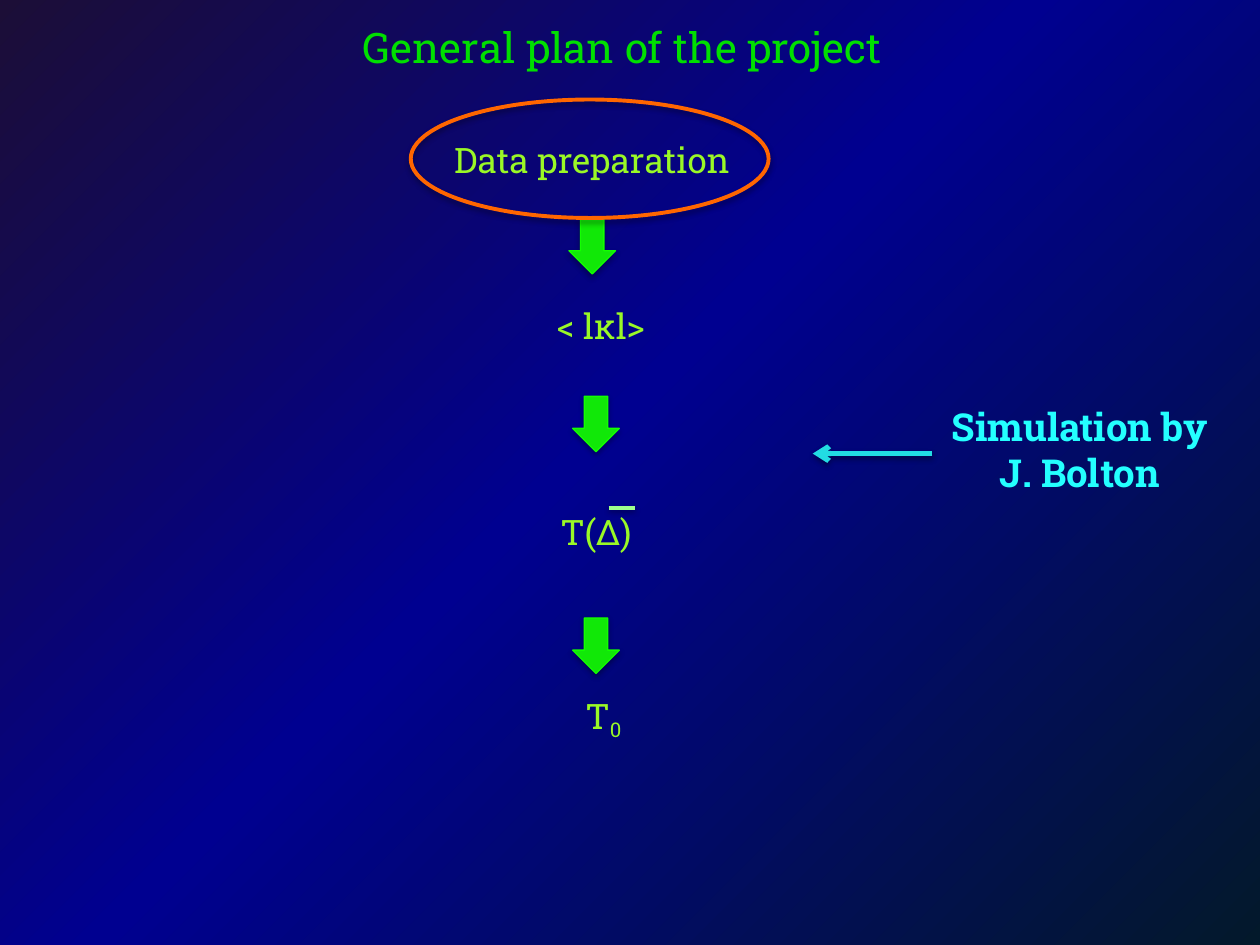
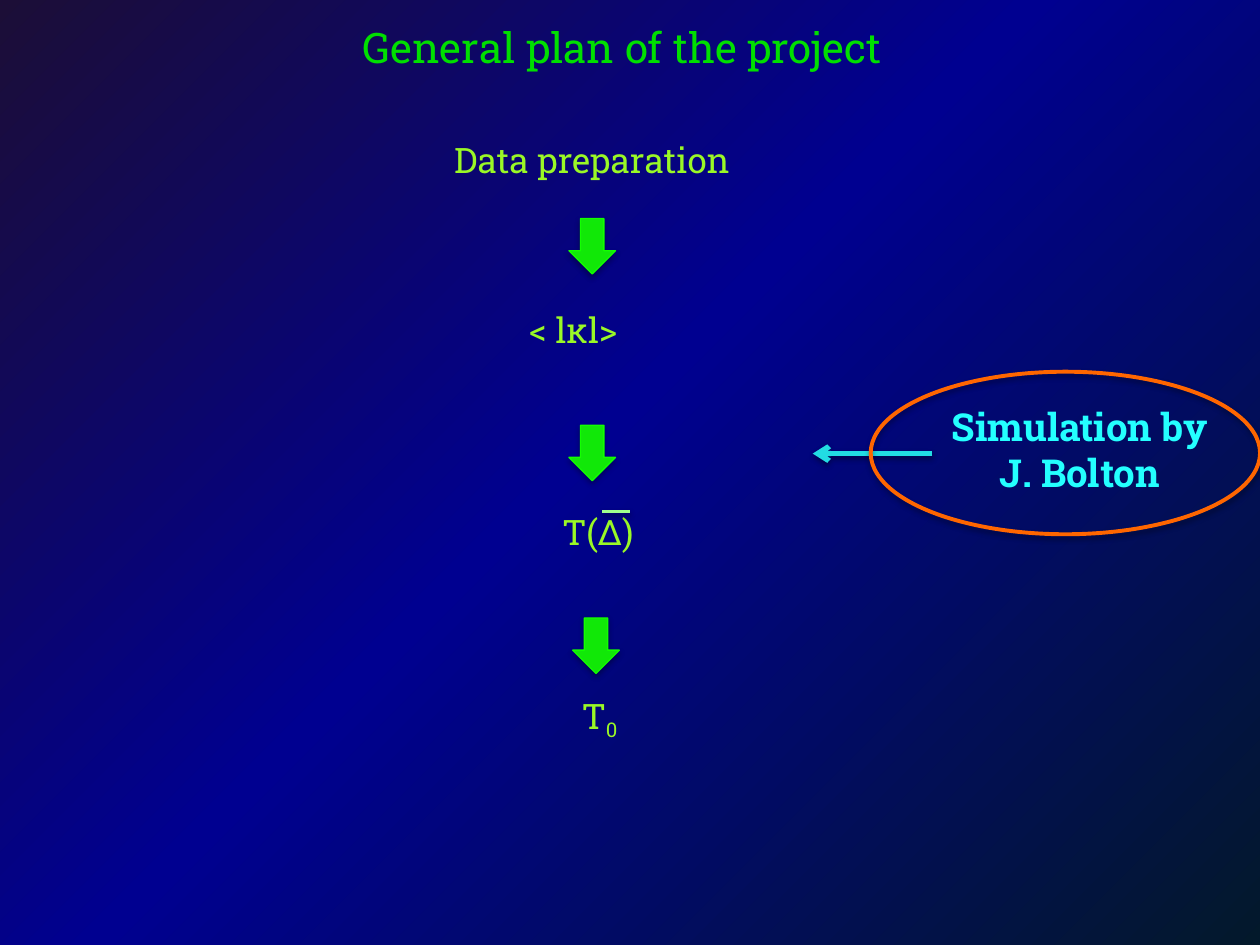
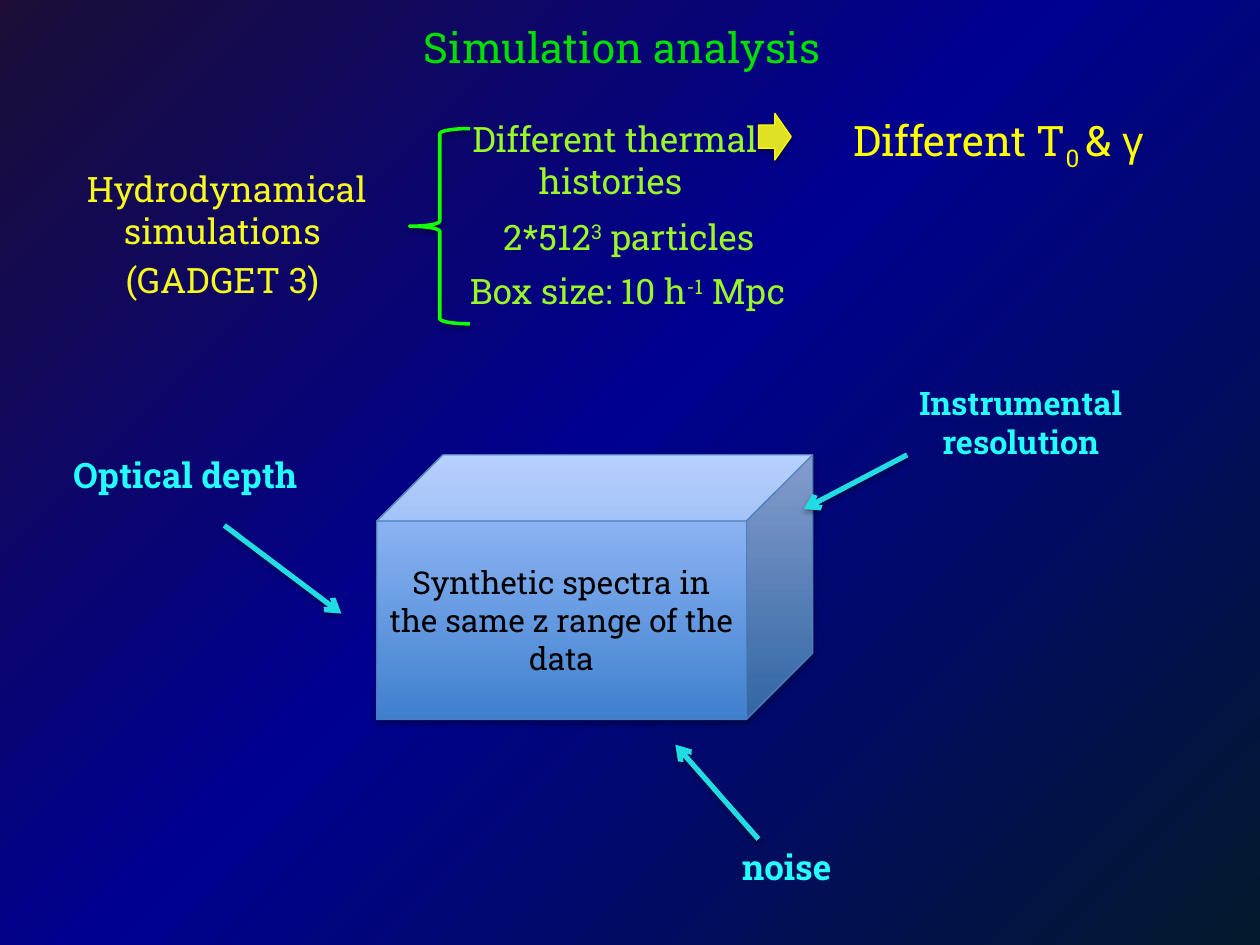
from dataclasses import dataclass
from typing import NamedTuple

from lxml import etree
from pptx import Presentation
from pptx.dml.color import RGBColor
from pptx.enum.shapes import MSO_CONNECTOR, MSO_SHAPE
from pptx.enum.text import MSO_ANCHOR, PP_ALIGN
from pptx.oxml import parse_xml
from pptx.oxml.ns import nsdecls, qn
from pptx.util import Emu, Pt

PX = 9144
STRAIGHT = MSO_CONNECTOR.STRAIGHT
ARROW = MSO_SHAPE.RIGHT_ARROW
BRACE = MSO_SHAPE.RIGHT_BRACE
CUBE = MSO_SHAPE.CUBE
ELLIPSE = MSO_SHAPE.OVAL
CENTER = PP_ALIGN.CENTER
TOP = MSO_ANCHOR.TOP
MIDDLE = MSO_ANCHOR.MIDDLE


@dataclass(frozen=True)
class Theme:
    font: str = "Roboto Slab"
    symbol_font: str = "Arial"
    title: str = "00DF00"
    step: str = "9AF826"
    input: str = "24FFFF"
    pointer: str = "22DCE3"
    flow: str = "13FF00"
    overline: str = "9FFF8D"
    focus: str = "FF6600"
    code: str = "F6F81F"
    result: str = "FFFF00"
    ink: str = "000000"
    cube_line: str = "4B7EBC"
    cube_stops: tuple = ((0, "3F80CE"), (100, "A4C4FF"))
    page_stops: tuple = ((0, "1C0E37"), (47, "000090"), (100, "03192B"))
    title_size: float = 24
    input_size: float = 22
    body_size: float = 20
    small_size: float = 18.5
    cube_size: float = 18
    sub: int = -25
    sup: int = 30


THEME = Theme()


class Frame(NamedTuple):
    left: int
    top: int
    width: int
    height: int


class Span(NamedTuple):
    text: str
    baseline: int = 0
    font: str = THEME.font


@dataclass(frozen=True)
class Caption:
    frame: Frame
    paras: tuple[tuple[Span, ...], ...]
    color: str = THEME.step
    size: float = THEME.body_size
    bold: bool = False


@dataclass(frozen=True)
class Figure:
    kind: int
    frame: Frame
    line: str
    weight: float = 0.75
    fill: str | None = None
    rotation: int = 0
    shadow: int = 35


@dataclass(frozen=True)
class Stroke:
    start: tuple[int, int]
    end: tuple[int, int]
    color: str = THEME.pointer
    weight: float = 3
    arrow: bool = True


@dataclass(frozen=True)
class Plan:
    mean_curvature: Caption
    temperature: Caption
    base_temperature: Caption
    second_arrow: tuple[int, int]
    overline: Stroke
    focus: Frame


def emu(*lengths: int) -> list[Emu]:
    return [Emu(length * PX) for length in lengths]


def line_of(text: str) -> tuple[tuple[Span, ...], ...]:
    return ((Span(text),),)


def gradient(stops: tuple, direction: str):
    marks = "".join(
        f'<a:gs pos="{place * 1000}"><a:srgbClr val="{color}"/></a:gs>'
        for place, color in stops
    )
    return parse_xml(
        f'<a:gradFill {nsdecls("a")} rotWithShape="1">'
        f"<a:gsLst>{marks}</a:gsLst>{direction}</a:gradFill>"
    )


def add_shadow(properties, opacity: int) -> None:
    distance = 23000 if opacity == 35 else 20000
    properties.append(parse_xml(
        f'<a:effectLst {nsdecls("a")}><a:outerShdw blurRad="40000" '
        f'dist="{distance}" dir="5400000" rotWithShape="0">'
        f'<a:srgbClr val="{THEME.ink}"><a:alpha val="{opacity * 1000}"/>'
        "</a:srgbClr></a:outerShdw></a:effectLst>"
    ))


def write(box, caption: Caption, anchor=TOP) -> None:
    frame = box.text_frame
    frame.word_wrap = True
    frame.vertical_anchor = anchor
    for index, spans in enumerate(caption.paras):
        para = frame.add_paragraph() if index else frame.paragraphs[0]
        para.alignment = CENTER
        if index:
            para.space_before = Pt(caption.size * 0.2)
        for span in spans:
            run = para.add_run()
            run.text = span.text
            run.font.name = span.font
            run.font.size = Pt(caption.size)
            run.font.bold = caption.bold
            run.font.color.rgb = RGBColor.from_string(caption.color)
            if span.baseline:
                run._r.get_or_add_rPr().set("baseline", str(span.baseline * 1000))


def add_caption(page, caption: Caption) -> None:
    write(page.shapes.add_textbox(*emu(*caption.frame)), caption)


def add_figure(page, figure: Figure):
    shape = page.shapes.add_shape(figure.kind, *emu(*figure.frame))
    shape.rotation = figure.rotation
    shape.line.color.rgb = RGBColor.from_string(figure.line)
    shape.line.width = Pt(figure.weight)
    properties = shape.element.spPr
    if figure.fill:
        shape.fill.solid()
        shape.fill.fore_color.rgb = RGBColor.from_string(figure.fill)
        color = properties.find(qn("a:solidFill")).find(qn("a:srgbClr"))
        etree.SubElement(color, qn("a:alpha")).set("val", "91000")
    else:
        shape.fill.background()
    add_shadow(properties, figure.shadow)
    return shape


def add_stroke(page, stroke: Stroke) -> None:
    connector = page.shapes.add_connector(
        STRAIGHT, *emu(*stroke.start, *stroke.end)
    )
    connector.line.color.rgb = RGBColor.from_string(stroke.color)
    connector.line.width = Pt(stroke.weight)
    properties = connector.element.spPr
    if stroke.arrow:
        line = properties.find(qn("a:ln"))
        etree.SubElement(line, qn("a:tailEnd")).set("type", "arrow")
    add_shadow(properties, 38)


def add_page(deck, title: str):
    page = deck.slides.add_slide(deck.slide_layouts[6])
    add_caption(page, Caption(
        Frame(22, 12, 952, 74), line_of(title), THEME.title, THEME.title_size
    ))
    return page


def paint_background(deck) -> None:
    master = deck.slide_master
    master.background.fill.solid()
    properties = master.element.find(".//" + qn("p:bgPr"))
    properties.replace(properties[0], gradient(
        THEME.page_stops,
        '<a:path path="circle"><a:fillToRect r="100000" b="100000"/></a:path>',
    ))


def add_plan_page(deck, plan: Plan) -> None:
    page = add_page(deck, "General plan of the project ")
    for caption in (
        Caption(Frame(295, 105, 350, 53), line_of("Data preparation")),
        plan.mean_curvature,
        plan.temperature,
        plan.base_temperature,
    ):
        add_caption(page, caption)
    add_stroke(page, Stroke((740, 360), (645, 360)))
    add_caption(page, Caption(
        Frame(740, 315, 234, 106), line_of("Simulation by J. Bolton"),
        THEME.input, THEME.input_size, True,
    ))
    for left, top in ((448, 177), plan.second_arrow, (451, 494)):
        add_figure(page, Figure(
            ARROW, Frame(left, top, 44, 37), THEME.flow,
            fill=THEME.flow, rotation=90,
        ))
    add_stroke(page, plan.overline)
    add_figure(page, Figure(ELLIPSE, plan.focus, THEME.focus, 2.25, rotation=90))


def add_analysis_page(deck) -> None:
    page = add_page(deck, "Simulation analysis ")
    cube_frame = Frame(299, 361, 346, 210)
    cube = add_figure(page, Figure(CUBE, cube_frame, THEME.cube_line))
    properties = cube.element.spPr
    properties.replace(
        properties.find(qn("a:noFill")),
        gradient(THEME.cube_stops, '<a:lin ang="16200000" scaled="0"/>'),
    )
    write(cube, Caption(
        cube_frame, line_of("Synthetic spectra in the same z range of the data"),
        THEME.ink, THEME.cube_size,
    ), MIDDLE)
    add_figure(page, Figure(
        BRACE, Frame(325, 102, 48, 155), THEME.flow, 2, rotation=180, shadow=38
    ))
    for caption in (
        Caption(
            Frame(18, 128, 324, 80),
            line_of("Hydrodynamical simulations ") + line_of("(GADGET 3) "),
            THEME.code,
        ),
        Caption(Frame(318, 209, 367, 54), (
            (Span("Box size: 10 h"), Span("-1", THEME.sup), Span(" Mpc ")),
        )),
        Caption(Frame(373, 166, 259, 54), (
            (Span("2*512"), Span("3", THEME.sup), Span(" particles ")),
        )),
        Caption(Frame(641, 86, 312, 64), ((
            Span("Different T"), Span("0 ", THEME.sub), Span("& "),
            Span("γ ", font=THEME.symbol_font),
        ),), THEME.result, THEME.title_size),
        Caption(Frame(354, 88, 268, 80), line_of("Different thermal histories ")),
    ):
        add_caption(page, caption)
    add_figure(page, Figure(
        ARROW, Frame(602, 90, 26, 37), THEME.result, fill=THEME.code
    ))
    for text, frame, size in (
        ("Instrumental resolution", Frame(685, 299, 250, 65), THEME.small_size),
        ("Optical depth", Frame(22, 355, 250, 49), THEME.body_size),
        ("noise", Frame(541, 666, 167, 53), THEME.body_size),
    ):
        add_caption(page, Caption(frame, line_of(text), THEME.input, size, True))
    for start, end in (
        ((720, 361), (638, 404)),
        ((602, 666), (536, 591)),
        ((178, 417), (271, 487)),
    ):
        add_stroke(page, Stroke(start, end))


def main() -> None:
    deck = Presentation()
    deck.slide_width, deck.slide_height = emu(1000, 750)
    paint_background(deck)
    base_temperature = ((Span("T"), Span("0 ", THEME.sub)),)
    plans = (
        Plan(
            Caption(Frame(308, 237, 331, 78), line_of(" < lκl>")),
            Caption(Frame(384, 400, 185, 79), line_of("T(Δ) ")),
            Caption(Frame(295, 546, 372, 79), base_temperature),
            (451, 318),
            Stroke((483, 403), (504, 403), THEME.overline, 2, False),
            Frame(421, -16, 94, 284),
        ),
        Plan(
            Caption(Frame(366, 240, 178, 78), line_of("< lκl>")),
            Caption(Frame(292, 400, 372, 79), line_of("T(Δ) ")),
            Caption(Frame(292, 546, 372, 79), base_temperature),
            (448, 341),
            Stroke((478, 406), (500, 406), THEME.overline, 2, False),
            Frame(781, 205, 129, 309),
        ),
    )
    for plan in plans:
        add_plan_page(deck, plan)
    add_analysis_page(deck)
    deck.save("out.pptx")


if __name__ == "__main__":
    main()
